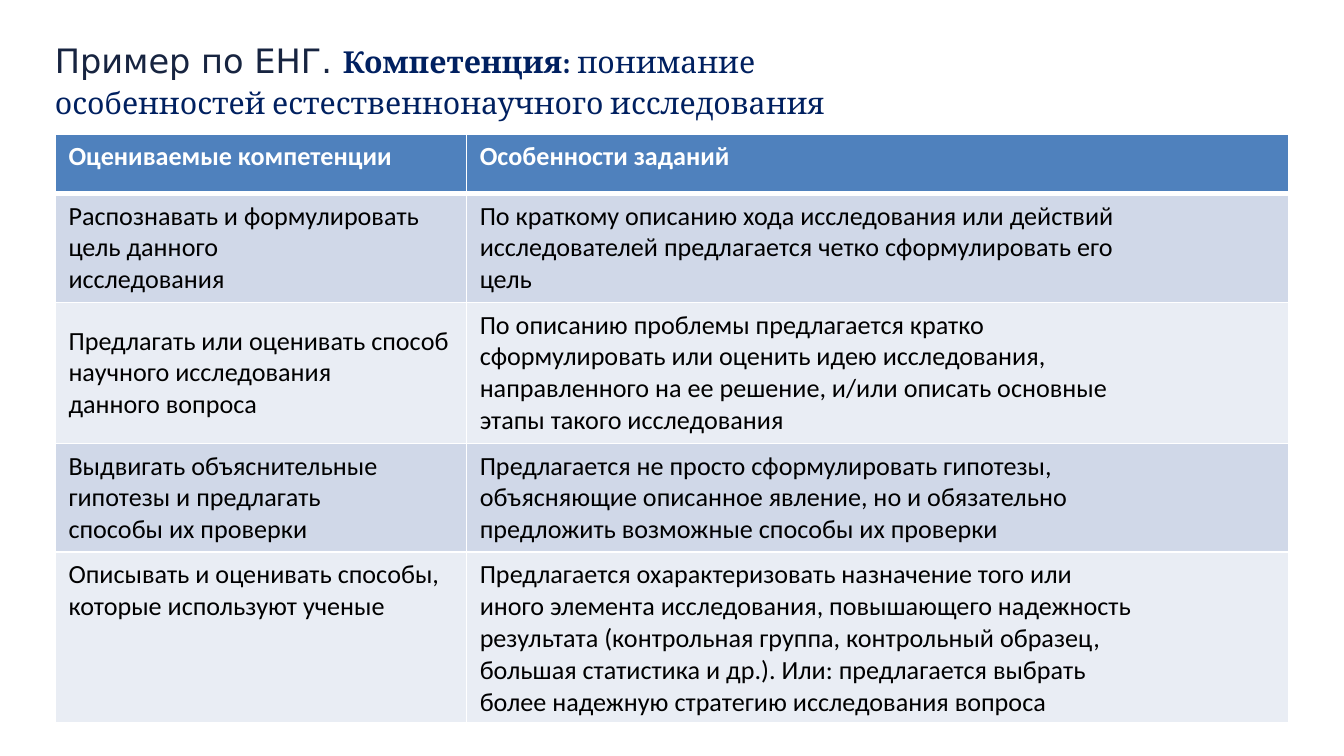
from lxml import etree
from pptx import Presentation
from pptx.dml.color import RGBColor
from pptx.enum.text import MSO_ANCHOR
from pptx.oxml.ns import qn
from pptx.util import Inches, Pt

TOP, MIDDLE = MSO_ANCHOR.TOP, MSO_ANCHOR.MIDDLE
WIDTH = 10
HEIGHT = WIDTH * 9 / 16
COLORS = {"navy": "002060", "ink": "172440", "header": "4F81BD", "odd": "D0D8E8",
          "even": "E9EDF4", "white": "FFFFFF", "black": "000000"}
FORMATS = {
    "lead": {"name": "DejaVu Sans", "size": Pt(18), "bold": False, "color": "ink"},
    "strong": {"name": "Cambria", "size": Pt(16.2), "bold": True, "color": "navy"},
    "topic": {"name": "Cambria", "size": Pt(16.2), "bold": False, "color": "navy"},
    "header": {"name": "Calibri", "size": Pt(14), "bold": True, "color": "white"},
    "body": {"name": "Calibri", "size": Pt(14), "bold": False, "color": "black"},
}
TITLE = [
    ("Пример по ЕНГ. ", "lead"),
    ("Компетенция: ", "strong"),
    ("понимание особенностей естественнонаучного исследования", "topic"),
    (" ", "lead"),
]
COLUMN_SHARES = [1 / 3, 2 / 3]
ROW_HEIGHTS = [0.44, 0.81, 1.05, 0.81, 1.27]
ROWS = [
    ("Оцениваемые компетенции", "Особенности заданий"),
    ("Распознавать и формулировать цель данного\vисследования",
     "По краткому описанию хода исследования или действий\v"
     "исследователей предлагается четко сформулировать его\vцель"),
    ("Предлагать или оценивать способ научного исследования\vданного вопроса",
     "По описанию проблемы предлагается кратко\v"
     "сформулировать или оценить идею исследования,\v"
     "направленного на ее решение, и/или описать основные\v"
     "этапы такого исследования"),
    ("Выдвигать объяснительные гипотезы и предлагать\vспособы их проверки",
     "Предлагается не просто сформулировать гипотезы,\v"
     "объясняющие описанное явление, но и обязательно\v"
     "предложить возможные способы их проверки"),
    ("Описывать и оценивать способы, которые используют ученые",
     "Предлагается охарактеризовать назначение того или\v"
     "иного элемента исследования, повышающего надежность\v"
     "результата (контрольная группа, контрольный образец,\v"
     "большая статистика и др.). Или: предлагается выбрать\v"
     "более надежную стратегию исследования вопроса"),
]


def rgb(color):
    return RGBColor.from_string(COLORS[color])


def style(r, kind):
    for key, value in FORMATS[kind].items():
        if key == "color":
            r.font.color.rgb = rgb(value)
        else:
            setattr(r.font, key, value)


def set_borders(cell, widths):
    tc_pr = cell._tc.get_or_add_tcPr()
    for i, (side, width) in enumerate(widths.items()):
        line = etree.Element(qn(f"a:ln{side}"), w=str(Pt(width)))
        fill = etree.SubElement(line, qn("a:solidFill"))
        etree.SubElement(fill, qn("a:srgbClr"), val=COLORS["white"])
        tc_pr.insert(i, line)


def add_title(s, box):
    tf = s.shapes.add_textbox(*map(Inches, box)).text_frame
    tf.word_wrap = True
    tf.vertical_anchor = TOP
    p = tf.paragraphs[0]
    for text, kind in TITLE:
        r = p.add_run()
        r.text = text
        style(r, kind)
    p.add_line_break()


def fill_cell(cell, text, row, column):
    is_header = row == 0
    fill = "header" if is_header else "odd" if row % 2 else "even"
    cell.fill.solid()
    cell.fill.fore_color.rgb = rgb(fill)
    top_aligned = is_header or (row == len(ROWS) - 1 and column == 0)
    cell.vertical_anchor = TOP if top_aligned else MIDDLE
    p = cell.text_frame.paragraphs[0]
    p.text = text
    for r in p.runs:
        style(r, "header" if is_header else "body")
    set_borders(cell, {"L": 1, "R": 1, "T": 3 if row == 1 else 1, "B": 3 if is_header else 1})


def add_competence_table(s, box):
    shape = s.shapes.add_table(len(ROWS), len(COLUMN_SHARES), *map(Inches, box))
    table = shape.table
    for column, share in zip(table.columns, COLUMN_SHARES):
        column.width = Inches(box[2] * share)
    for row, height in zip(table.rows, ROW_HEIGHTS):
        row.height = Inches(height * box[3] / sum(ROW_HEIGHTS))
    for i, texts in enumerate(ROWS):
        for j, text in enumerate(texts):
            fill_cell(table.cell(i, j), text, i, j)


def main():
    prs = Presentation()
    prs.slide_width, prs.slide_height = Inches(WIDTH), Inches(HEIGHT)
    s = prs.slides.add_slide(prs.slide_layouts[6])
    add_title(s, (0.31, 0.25, 6.39, 0.8))
    add_competence_table(s, (0.41, 1, 9.18, sum(ROW_HEIGHTS)))
    prs.save("out.pptx")


if __name__ == "__main__":
    main()
